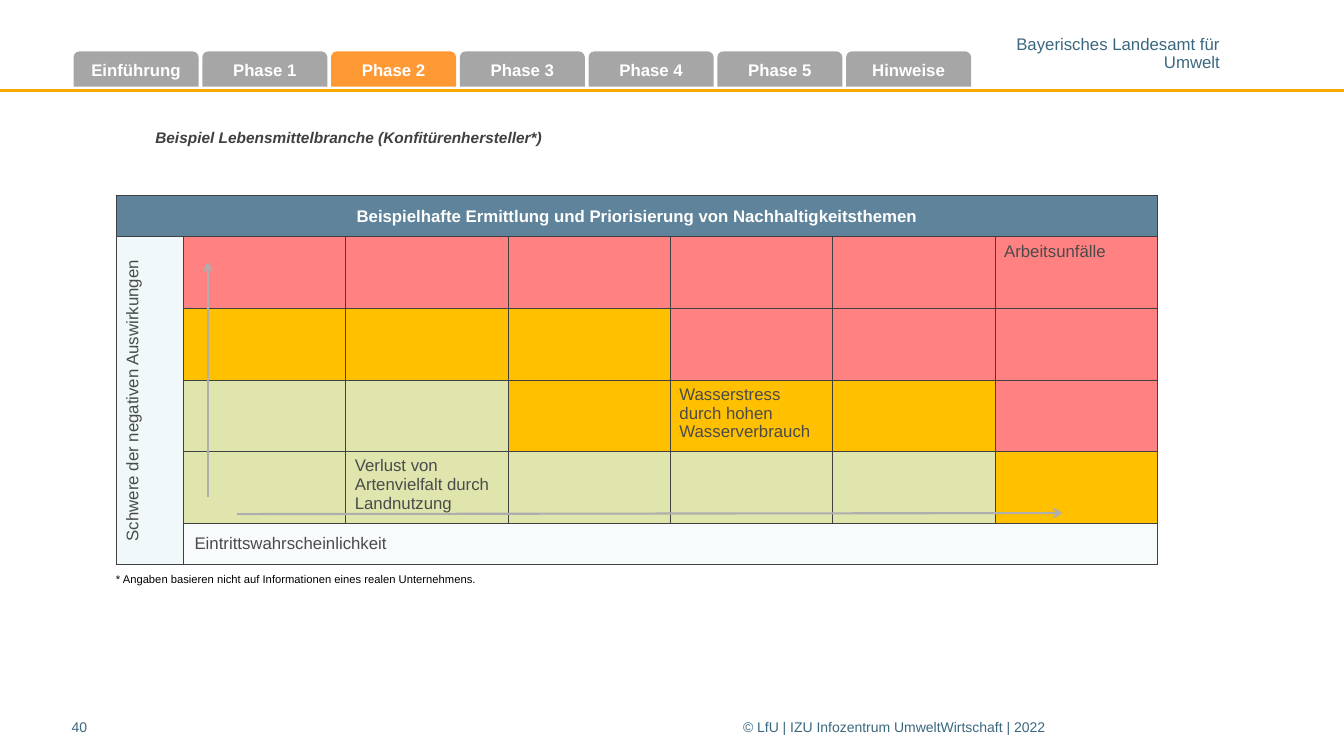
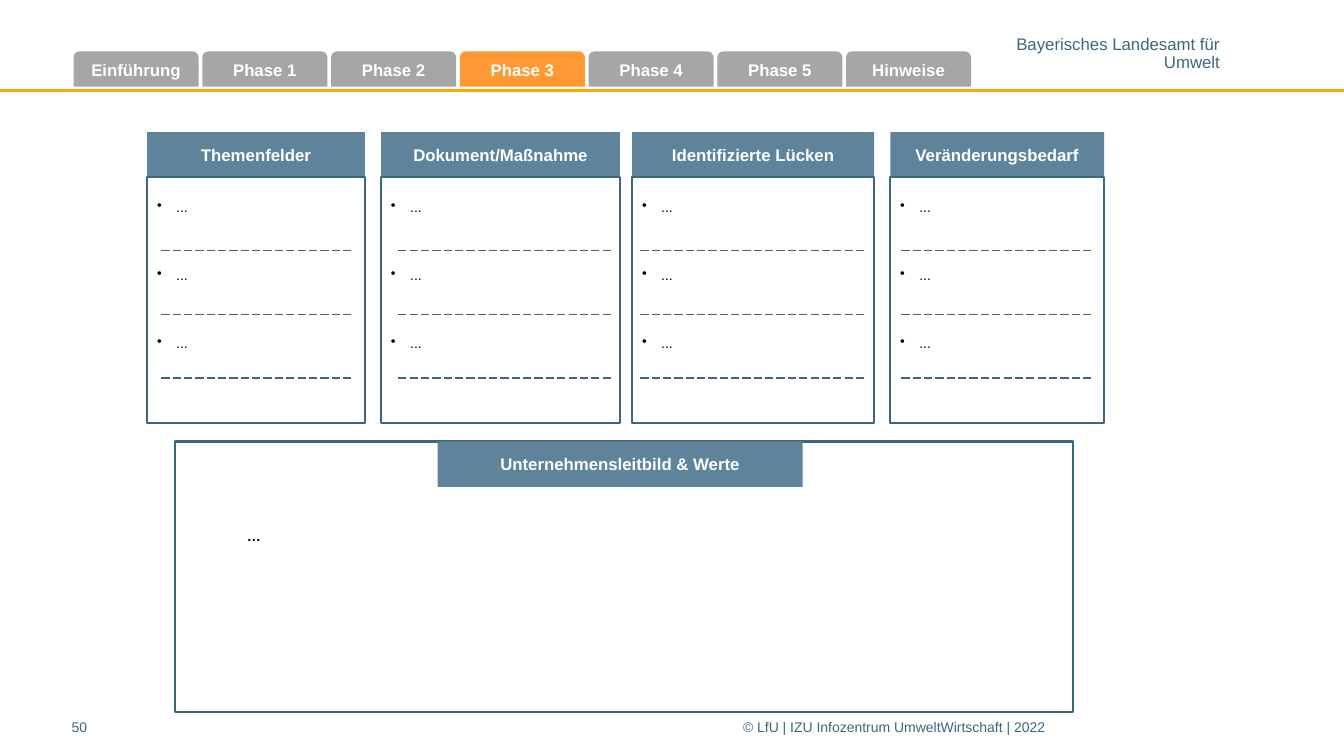
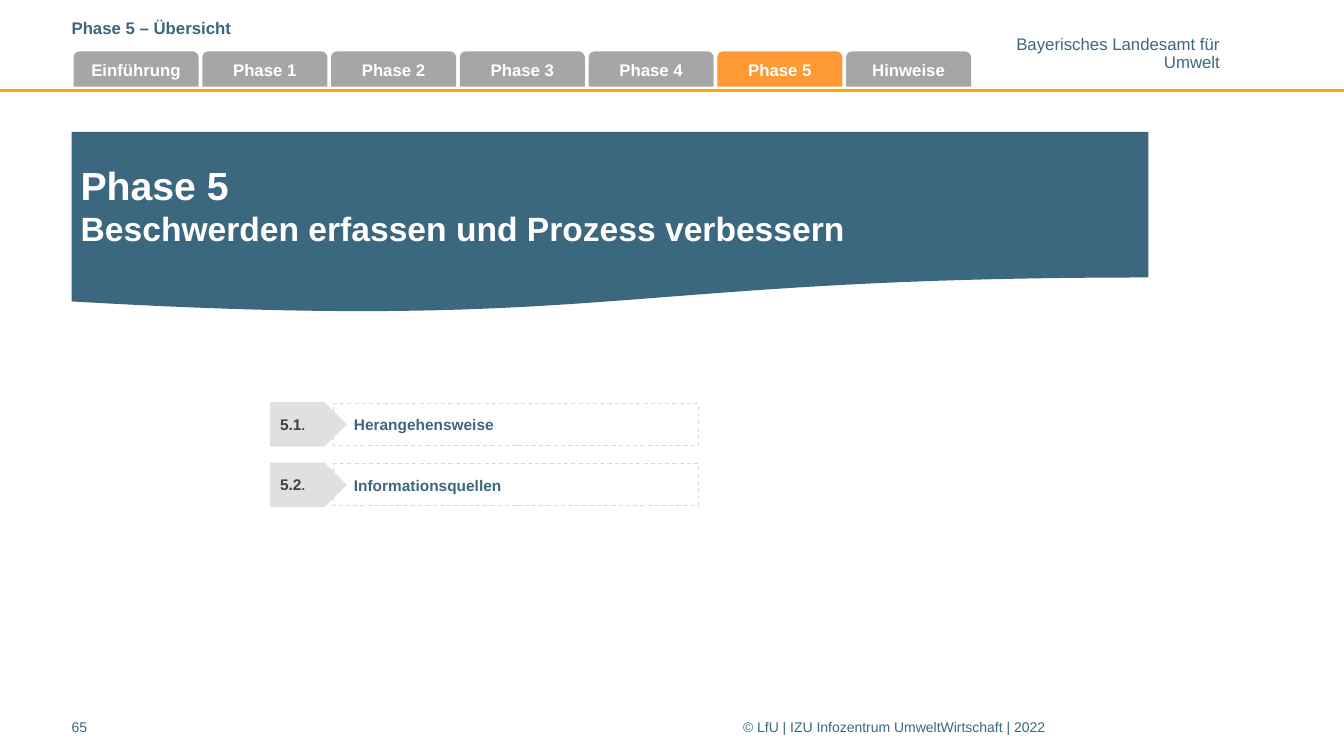
from lxml import etree
from pptx import Presentation
from pptx.dml.color import RGBColor
from pptx.enum.dml import MSO_LINE
from pptx.enum.shapes import MSO_CONNECTOR, MSO_SHAPE
from pptx.enum.text import MSO_ANCHOR, MSO_AUTO_SIZE, PP_ALIGN
from pptx.oxml.ns import qn
from pptx.util import Inches, Pt

LEFT, CENTER, RIGHT = PP_ALIGN.LEFT, PP_ALIGN.CENTER, PP_ALIGN.RIGHT
TOP, MIDDLE, BOTTOM = MSO_ANCHOR.TOP, MSO_ANCHOR.MIDDLE, MSO_ANCHOR.BOTTOM
RECT = MSO_SHAPE.RECTANGLE
TAB = MSO_SHAPE.ROUND_2_SAME_RECTANGLE
WAVE_BANNER = MSO_SHAPE.FLOWCHART_DOCUMENT
ARROW_TAG = MSO_SHAPE.PENTAGON
DASH, LONG_DASH = MSO_LINE.DASH, MSO_LINE.LONG_DASH
TITLE_ONLY, BLANK = 5, 6

FONT = "Arial"
COLORS = {
    "white": "FFFFFF", "black": "000000", "teal": "3B687F", "steel": "5E839A",
    "gold": "F9AA00", "tab": "A6A6A6", "active": "FF9933", "dark": "404040",
    "text": "4B4B4B", "arrow": "AEAEAE", "tag": "E0E0E0", "outline": "D9D9D9",
    "axis_y": "F0F8F9", "axis_x": "F8FBFC",
    "high": "FF8181", "medium": "FFC000", "low": "E0E5AD",
}
TABS = ["Einführung", "Phase 1", "Phase 2", "Phase 3", "Phase 4", "Phase 5", "Hinweise"]
RISK_LEVELS = {"H": "high", "M": "medium", "L": "low"}
RISK_GRID = ["HHHHHH", "MMMHHH", "LLMMMH", "LLLLLM"]
RISK_TOPICS = {
    (1, 6): "Arbeitsunfälle",
    (3, 4): "Wasserstress durch hohen Wasserverbrauch",
    (4, 2): "Verlust von Artenvielfalt durch Landnutzung",
}
GAP_COLUMNS = [
    ("Themenfelder", 1.46, 2.16, 0.14, 0.13),
    ("Dokument/Maßnahme", 3.78, 2.37, 0.17, 0.08),
    ("Identifizierte Lücken", 6.27, 2.4, 0.08, 0.08),
    ("Veränderungsbedarf", 8.83, 2.12, 0.11, 0.12),
]


def rgb(name):
    return RGBColor.from_string(COLORS[name])


def pad(holder, insets=(0.1, 0.05, 0.1, 0.05), anchor=TOP):
    holder.margin_left, holder.margin_top, holder.margin_right, holder.margin_bottom = map(Inches, insets)
    holder.vertical_anchor = anchor


def write(frame, *paragraphs, size=12, color="text", bold=False, italic=False,
          align=LEFT, spacing=None, before=0, bullet_indent=None):
    frame.word_wrap = True
    frame.auto_size = MSO_AUTO_SIZE.NONE
    for index, content in enumerate(paragraphs):
        paragraph = frame.add_paragraph() if index else frame.paragraphs[0]
        paragraph.alignment = align
        paragraph.space_before = Pt(before if index else 0)
        if spacing:
            paragraph.line_spacing = spacing
        if bullet_indent:
            properties = paragraph._p.get_or_add_pPr()
            properties.set("marL", str(Inches(bullet_indent)))
            properties.set("indent", str(-Inches(bullet_indent)))
            etree.SubElement(properties, qn("a:buChar")).set("char", "•")
        runs = [(content, size)] if isinstance(content, str) else content
        for text, run_size in runs:
            run = paragraph.add_run()
            run.text = text
            font = run.font
            font.name, font.size, font.bold, font.italic = FONT, Pt(run_size), bold, italic
            font.color.rgb = rgb(color)


def add_block(slide, kind, box, fill=None, line=None, weight=0.75, dash=None):
    block = slide.shapes.add_shape(kind, *map(Inches, box))
    block.shadow.inherit = False
    if fill:
        block.fill.solid()
        block.fill.fore_color.rgb = rgb(fill)
    else:
        block.fill.background()
    if line:
        block.line.color.rgb = rgb(line)
        block.line.width = Pt(weight)
        if dash:
            block.line.dash_style = dash
    else:
        block.line.fill.background()
    return block


def add_label(slide, box, *paragraphs, insets=(0, 0.05, 0, 0.05), **style):
    frame = slide.shapes.add_textbox(*map(Inches, box)).text_frame
    pad(frame, insets)
    write(frame, *paragraphs, **style)


def add_rule(slide, start, end, color, weight=0.75, dash=None, arrow=False):
    rule = slide.shapes.add_connector(MSO_CONNECTOR.STRAIGHT, *map(Inches, (*start, *end)))
    rule.line.color.rgb = rgb(color)
    rule.line.width = Pt(weight)
    if dash:
        rule.line.dash_style = dash
    if arrow:
        etree.SubElement(rule.line._get_or_add_ln(), qn("a:tailEnd")).set("type", "arrow")
    etree.SubElement(rule._element.spPr, qn("a:effectLst"))


def set_title(slide, box, text, anchor=TOP, insets=(0.1, 0.05, 0.1, 0.05), **style):
    title = slide.shapes.title
    title.left, title.top, title.width, title.height = map(Inches, box)
    pad(title.text_frame, insets, anchor)
    write(title.text_frame, text, bold=True, **style)


def add_header(slide, box, text):
    header = add_block(slide, RECT, box, "steel")
    pad(header.text_frame, (0.09, 0.04, 0.09, 0.04), MIDDLE)
    write(header.text_frame, text, color="white", bold=True, align=CENTER)


def start_slide(deck, layout, active, number):
    slide = deck.slides.add_slide(deck.slide_layouts[layout])
    add_rule(slide, (0, 0.9), (13.33, 0.9), "gold", 2)
    add_label(slide, (9.9, 0.37, 2.2, 0.34), "Bayerisches Landesamt für", "Umwelt",
              insets=(0, 0, 0, 0), color="teal", align=RIGHT, spacing=0.85)
    add_label(slide, (0.71, 7.08, 0.7, 0.31), number, size=10, color="teal")
    add_label(slide, (7.37, 7.08, 5.36, 0.31),
              "© LfU | IZU Infozentrum UmweltWirtschaft | 2022", size=10, color="teal")
    for index, name in enumerate(TABS):
        tab = add_block(slide, TAB, (0.73 + index * 1.277, 0.51, 1.24, 0.35),
                        "active" if name == active else "tab")
        pad(tab.text_frame, (0.04, 0.05, 0.04, 0.05), MIDDLE)
        write(tab.text_frame, name, color="white", bold=True, align=CENTER)
    return slide


def style_cell(cell, fill):
    cell.fill.solid()
    cell.fill.fore_color.rgb = rgb(fill)
    properties = cell._tc.get_or_add_tcPr()
    for index, side in enumerate(("lnL", "lnR", "lnT", "lnB")):
        border = etree.Element(qn(f"a:{side}"), w=str(Pt(0.75)))
        paint = etree.SubElement(border, qn("a:solidFill"))
        etree.SubElement(paint, qn("a:srgbClr")).set("val", COLORS["dark"])
        properties.insert(index, border)


def add_risk_matrix(slide, left, top):
    widths = [0.66] + [1.61] * 6
    heights = [0.41] + [0.71] * 4 + [0.41]
    matrix = slide.shapes.add_table(len(heights), len(widths), Inches(left), Inches(top),
                                    Inches(sum(widths)), Inches(sum(heights))).table
    matrix.first_row = matrix.horz_banding = False
    for column, width in zip(matrix.columns, widths):
        column.width = Inches(width)
    for row, height in zip(matrix.rows, heights):
        row.height = Inches(height)

    fills = [["steel"] * 7]
    fills += [["axis_y"] + [RISK_LEVELS[level] for level in levels] for levels in RISK_GRID]
    fills += [["axis_y"] + ["axis_x"] * 6]
    for row, row_fills in enumerate(fills):
        for column, fill in enumerate(row_fills):
            style_cell(matrix.cell(row, column), fill)

    heading, severity, likelihood = matrix.cell(0, 0), matrix.cell(1, 0), matrix.cell(5, 1)
    heading.merge(matrix.cell(0, 6))
    severity.merge(matrix.cell(5, 0))
    likelihood.merge(matrix.cell(5, 6))
    severity._tc.get_or_add_tcPr().set("vert", "vert270")
    for cell, anchor in ((heading, MIDDLE), (severity, TOP), (likelihood, MIDDLE)):
        pad(cell, (0.11, 0.06, 0.11, 0.06), anchor)
    write(heading.text_frame, "Beispielhafte Ermittlung und Priorisierung von Nachhaltigkeitsthemen",
          color="white", bold=True, align=CENTER)
    write(severity.text_frame, "Schwere der negativen Auswirkungen", align=CENTER)
    write(likelihood.text_frame, "Eintrittswahrscheinlichkeit")
    for position, topic in RISK_TOPICS.items():
        cell = matrix.cell(*position)
        pad(cell, (0.09, 0.05, 0.09, 0.05))
        write(cell.text_frame, topic)

    add_rule(slide, (left + 1.19, top + 3.16), (left + 9.38, top + 3.15), "arrow", 1.5, arrow=True)
    add_rule(slide, (left + 0.9, top + 2.99), (left + 0.9, top + 0.66), "arrow", 1.5, arrow=True)


def add_gap_column(slide, left, top, width, name, dash_left, dash_right):
    header_height = 0.45
    add_header(slide, (left, top, width, header_height), name)
    body_top = top + header_height
    body = add_block(slide, RECT, (left, body_top, width, 2.44), "white", "teal", 1.5)
    pad(body.text_frame, (0.1, 0.21, 0.1, 0.05))
    write(body.text_frame, *["..."] * 3, size=10, color="black", before=36.7, bullet_indent=0.19)
    for index in range(3):
        y = body_top + 0.73 + index * 0.63
        add_rule(slide, (left + dash_left, y), (left + width - dash_right, y), "teal", dash=LONG_DASH)


def add_mission_box(slide, left, top, width, height):
    add_block(slide, RECT, (left, top, width, height), line="teal", weight=1.5)
    add_header(slide, (left + 2.6, top, 3.62, 0.45), "Unternehmensleitbild & Werte")
    add_label(slide, (left + 0.61, top + 0.8, 1.81, 0.27), "…", insets=(0.1, 0.05, 0.1, 0.05),
              size=10, color="black", bold=True)


def add_chapter_row(slide, left, top, number, name):
    entry = add_block(slide, RECT, (left + 0.63, top + 0.01, 3.62, 0.42), line="outline", dash=DASH)
    pad(entry.text_frame, (0.2, 0.06, 0.11, 0.06), MIDDLE)
    write(entry.text_frame, name, size=11, color="teal", bold=True)
    tag = add_block(slide, ARROW_TAG, (left, top, 0.76, 0.44), "tag")
    pad(tag.text_frame, anchor=MIDDLE)
    write(tag.text_frame, [(number, 11), (".", 9)], color="dark", bold=True)


def build_matrix_slide(deck):
    slide = start_slide(deck, TITLE_ONLY, "Phase 2", "40")
    set_title(slide, (1.44, 1.22, 4.3, 0.29), "Beispiel Lebensmittelbranche (Konfitürenhersteller*)",
              size=11, color="dark", italic=True)
    add_risk_matrix(slide, 1.16, 1.94)
    add_label(slide, (1.06, 5.64, 4.06, 0.22),
              "* Angaben basieren nicht auf Informationen eines realen Unternehmens.",
              insets=(0.09, 0.04, 0.09, 0.04), size=8, color="black")


def build_gap_slide(deck):
    slide = start_slide(deck, BLANK, "Phase 3", "50")
    for name, left, width, dash_left, dash_right in GAP_COLUMNS:
        add_gap_column(slide, left, 1.31, width, name, dash_left, dash_right)
    add_mission_box(slide, 1.74, 4.38, 8.9, 2.68)


def build_chapter_slide(deck):
    slide = start_slide(deck, TITLE_ONLY, "Phase 5", "65")
    set_title(slide, (0.71, 0.13, 7.93, 0.3), "Phase 5 – Übersicht", BOTTOM,
              (0, 0.05, 0, 0.05), color="teal", spacing=Pt(16))
    banner = add_block(slide, WAVE_BANNER, (0.71, 1.31, 10.68, 1.8), "teal")
    pad(banner.text_frame, (0.09, 0.04, 0.09, 0.04), MIDDLE)
    write(banner.text_frame, [("Phase 5", 28)], [("Beschwerden erfassen und Prozess verbessern", 24)],
          color="white", bold=True)
    for index, name in enumerate(["Herangehensweise", "Informationsquellen"]):
        add_chapter_row(slide, 2.68, 3.99 + index * 0.6, f"5.{index + 1}", name)


def main():
    deck = Presentation()
    deck.slide_width, deck.slide_height = Inches(13.33), Inches(7.5)
    build_matrix_slide(deck)
    build_gap_slide(deck)
    build_chapter_slide(deck)
    deck.save("out.pptx")


if __name__ == "__main__":
    main()
